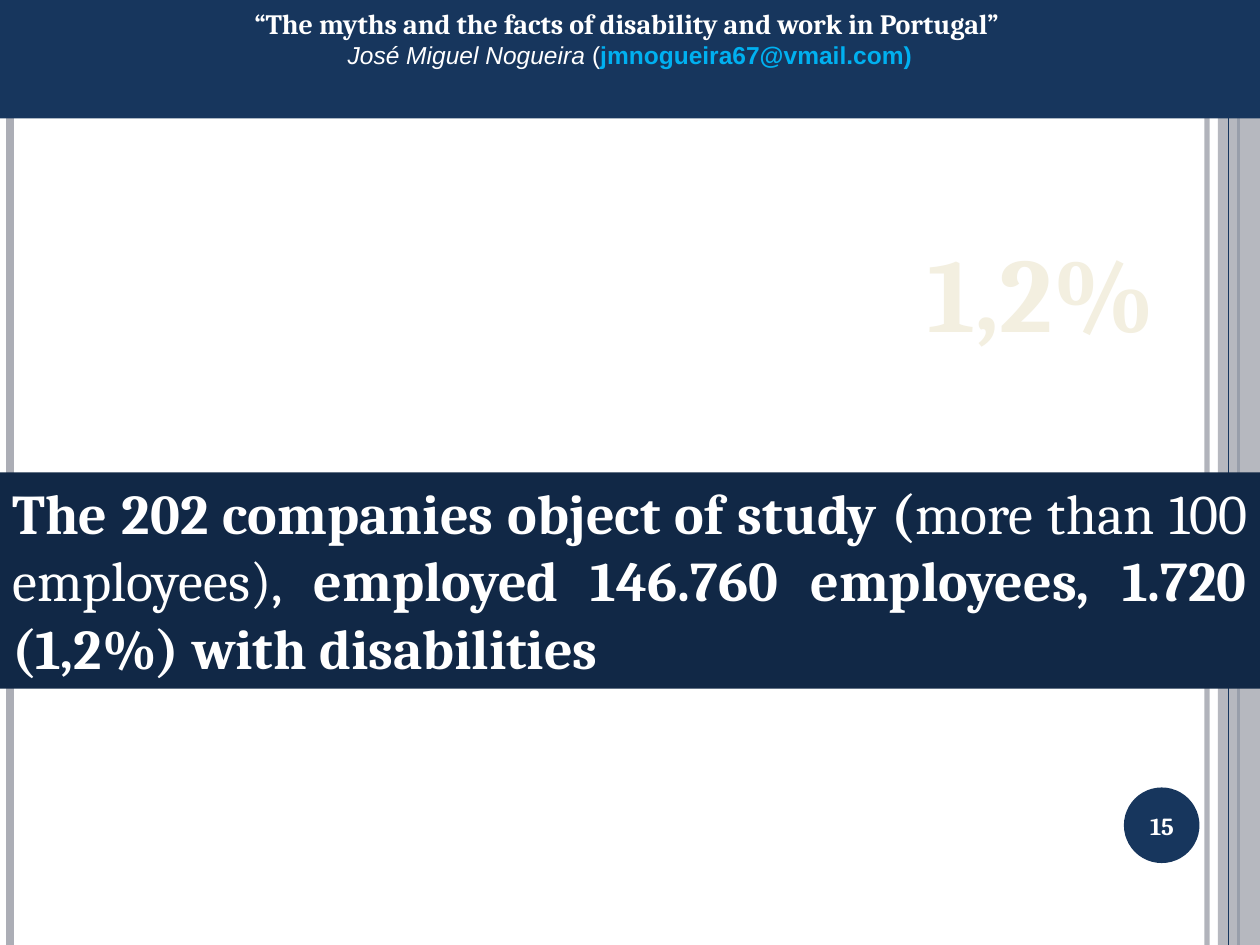
from lxml.etree import SubElement
from pptx import Presentation
from pptx.dml.color import RGBColor
from pptx.enum.shapes import MSO_CONNECTOR, MSO_SHAPE
from pptx.enum.text import MSO_ANCHOR, PP_ALIGN
from pptx.oxml.ns import qn
from pptx.util import Pt

WIDTH, HEIGHT = 720, 540
NAVY, DARK_NAVY, GREY, WHITE = "17365D", "112846", "ACAEB6", "FFFFFF"
CYAN, CREAM = "00B0F0", "F3EFE0"

HEADER = [
    [("“The myths and the facts of disability and work in Portugal” ", dict(size=16, bold=True))],
    [
        ("José Miguel Nogueira ", dict(size=14, font="Arial", italic=True)),
        ("(", dict(size=14, font="Arial")),
        ("jmnogueira67@vmail.com)", dict(size=14, font="Arial", bold=True, color=CYAN)),
    ],
]
FINDING = [[
    ("The 202 companies object of study (", dict(size=32, bold=True)),
    ("more than 100 employees), ", dict(size=32)),
    ("employed 146.760 employees, 1.720 (1,2%) with disabilities", dict(size=32, bold=True)),
]]
SHARE = [[("1,2%", dict(size=60, bold=True, color=CREAM))]]
PAGE_NUMBER = [[("15", dict(size=14, bold=True))]]

RULES_BEHIND = [(689.76, 3, GREY, 93), (5.76, 4.5, GREY, 100), (707.76, 1.5, NAVY, 100)]
RULE_IN_FRONT = (702, 0.75, NAVY, 100)

presentation = Presentation()
presentation.slide_width, presentation.slide_height = Pt(WIDTH), Pt(HEIGHT)
slide = presentation.slides.add_slide(presentation.slide_layouts[6])


def rgb(value):
    return RGBColor.from_string(value)


def set_opacity(properties, percent):
    color = next(properties.iter(qn("a:srgbClr")))
    SubElement(color, qn("a:alpha")).set("val", str(percent * 1000))


def add_rule(x, weight, color, opacity):
    rule = slide.shapes.add_connector(MSO_CONNECTOR.STRAIGHT, Pt(x), Pt(0), Pt(x), Pt(HEIGHT))
    rule.line.width = Pt(weight)
    rule.line.color.rgb = rgb(color)
    properties = rule.element.spPr
    if opacity < 100:
        set_opacity(properties, opacity)
    SubElement(properties, qn("a:effectLst"))


def add_panel(kind, left, top, width, height, color):
    panel = slide.shapes.add_shape(kind, Pt(left), Pt(top), Pt(width), Pt(height))
    panel.shadow.inherit = False
    panel.fill.solid()
    panel.fill.fore_color.rgb = rgb(color)
    panel.line.fill.background()
    return panel


def add_label(left, top, width, height):
    return slide.shapes.add_textbox(Pt(left), Pt(top), Pt(width), Pt(height))


def add_run(paragraph, text, size, font="Cambria", color=WHITE, bold=False, italic=False):
    run = paragraph.add_run()
    run.text = text
    run.font.size = Pt(size)
    run.font.name = font
    run.font.color.rgb = rgb(color)
    run.font.bold = bold
    run.font.italic = italic


def write(holder, paragraphs, align=PP_ALIGN.CENTER, anchor=MSO_ANCHOR.TOP):
    frame = holder.text_frame
    frame.word_wrap = True
    frame.vertical_anchor = anchor
    for index, runs in enumerate(paragraphs):
        paragraph = frame.add_paragraph() if index else frame.paragraphs[0]
        paragraph.alignment = align
        for text, style in runs:
            add_run(paragraph, text, **style)


for rule_behind in RULES_BEHIND:
    add_rule(*rule_behind)
side_band = add_panel(MSO_SHAPE.RECTANGLE, 696, 0, 24, HEIGHT, GREY)
set_opacity(side_band.element.spPr, 87)
add_rule(*RULE_IN_FRONT)

add_panel(MSO_SHAPE.OVAL, 642.24, 450, 43.2, 43.2, NAVY)
write(add_label(640, 451.4, 48, 41), PAGE_NUMBER, anchor=MSO_ANCHOR.MIDDLE)

write(add_label(515, 124, 160, 84), SHARE, anchor=MSO_ANCHOR.MIDDLE)

header_band = add_panel(MSO_SHAPE.RECTANGLE, 0, 0, WIDTH, 67.7, NAVY)
write(header_band, HEADER)

finding_band = add_panel(MSO_SHAPE.RECTANGLE, 0, 270, WIDTH, 123.6, DARK_NAVY)
write(finding_band, FINDING, align=PP_ALIGN.JUSTIFY)

presentation.save("out.pptx")
